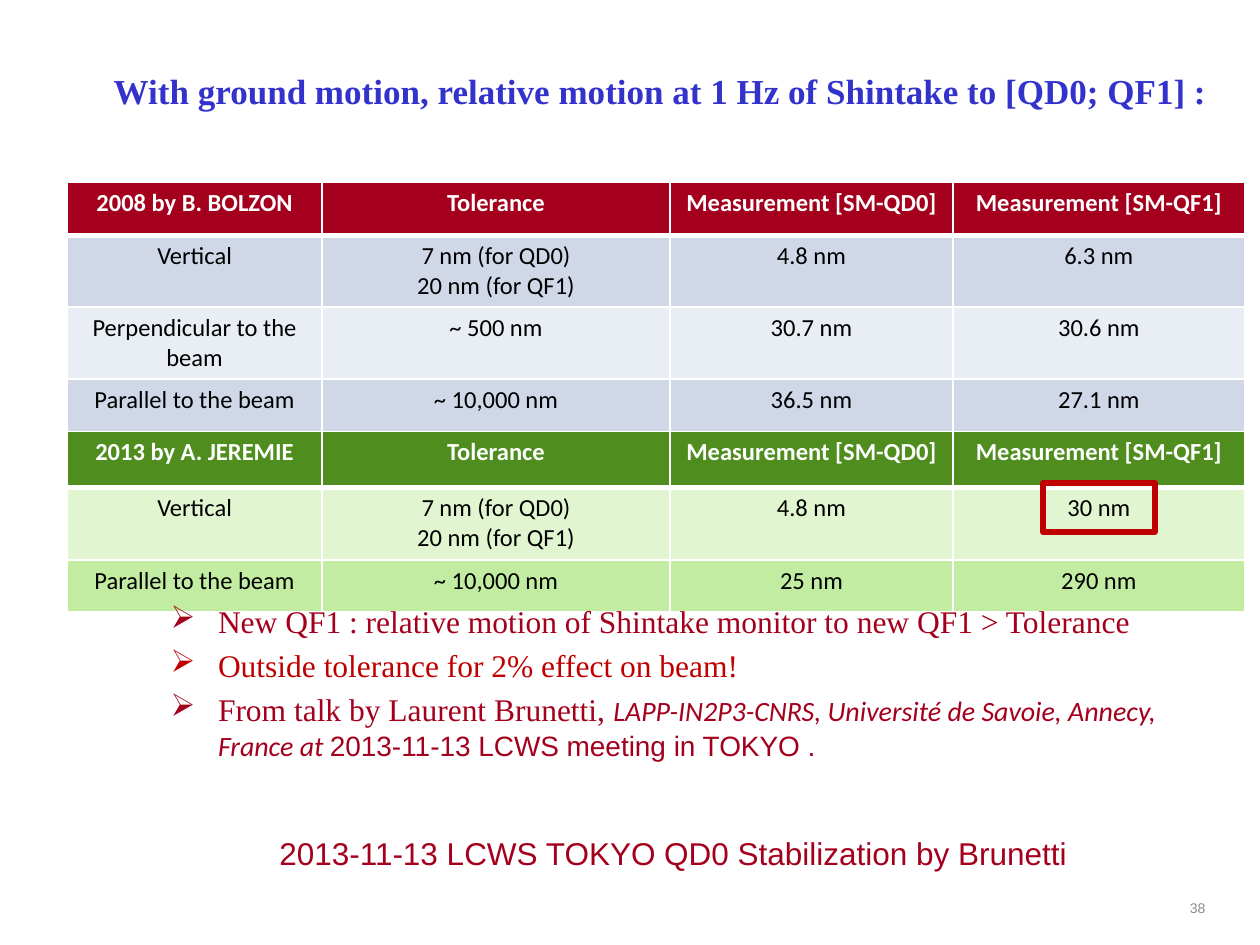
from lxml.etree import SubElement
from pptx import Presentation
from pptx.dml.color import RGBColor
from pptx.enum.shapes import MSO_SHAPE
from pptx.enum.text import MSO_ANCHOR, PP_ALIGN
from pptx.oxml.ns import qn
from pptx.util import Pt

COLORS = {
    "title": "3333CC", "crimson": "A4001D", "red": "C00000", "gray": "8C8C8C",
    "white": "FFFFFF", "black": "000000", "blue_dark": "D0D8E8",
    "blue_light": "E9EDF4", "green": "4F8E1E", "green_light": "E1F5D1",
    "green_dark": "C2ECA2",
}
SERIF, SANS, TABLE_FONT = "Times New Roman", "Arial", "Calibri"

# Content
TITLE = "With ground motion, relative motion at 1 Hz of Shintake to [QD0; QF1] :"
FOOTER = "2013-11-13 LCWS TOKYO QD0 Stabilization by Brunetti"
PAGE_NUMBER = "38"
HEADINGS = ["Tolerance", "Measurement [SM-QD0]", "Measurement [SM-QF1]"]
VERTICAL_TOLERANCE = "7 nm (for QD0)\n20 nm (for QF1)"
COLUMN_WIDTHS = [145.5, 199, 161.5, 167]
TABLES = [
    {"left": 38.5, "top": 104, "heights": [30.5, 41, 41, 30],
     "fills": ["crimson", "blue_dark", "blue_light", "blue_dark"],
     "rows": [["2008 by B. BOLZON", *HEADINGS],
              ["Vertical", VERTICAL_TOLERANCE, "4.8 nm", "6.3 nm"],
              ["Perpendicular to the beam", "~ 500 nm", "30.7 nm", "30.6 nm"],
              ["Parallel to the beam", "~ 10,000 nm", "36.5 nm", "27.1 nm"]]},
    {"left": 38.5, "top": 246.5, "heights": [32, 41.5, 29.5],
     "fills": ["green", "green_light", "green_dark"],
     "rows": [["2013 by A. JEREMIE", *HEADINGS],
              ["Vertical", VERTICAL_TOLERANCE, "4.8 nm", "30 nm"],
              ["Parallel to the beam", "~ 10,000 nm", "25 nm", "290 nm"]]},
]
# Each bullet is a list of runs: text, size, font, color, italic
BULLETS = [
    [("New QF1 : relative motion of Shintake monitor to new QF1 > Tolerance",
      18, SERIF, "crimson", False)],
    [("Outside tolerance for 2% effect on beam!", 18, SERIF, "red", False)],
    [("From talk by Laurent Brunetti, ", 18, SERIF, "crimson", False),
     ("LAPP-IN2P3-CNRS, Université de Savoie, Annecy, France at ",
      16, TABLE_FONT, "crimson", True),
     ("2013-11-13 LCWS meeting in TOKYO .", 16, SANS, "crimson", False)],
]


def rgb(name):
    return RGBColor.from_string(COLORS[name])


def style(font, size, name, color, bold=False, italic=False):
    font.size, font.name = Pt(size), name
    font.bold, font.italic = bold, italic
    font.color.rgb = rgb(color)


def add_text_box(slide, left, top, width, height):
    text_frame = slide.shapes.add_textbox(
        Pt(left), Pt(top), Pt(width), Pt(height)).text_frame
    text_frame.word_wrap = True
    return text_frame


def add_borders(cell, top, bottom):
    properties = cell._tc.get_or_add_tcPr()
    for tag, width in (("lnL", 1), ("lnR", 1), ("lnT", top), ("lnB", bottom)):
        line = SubElement(properties, qn(f"a:{tag}"), w=str(Pt(width)))
        fill = SubElement(line, qn("a:solidFill"))
        SubElement(fill, qn("a:srgbClr"), val=COLORS["white"])


def add_measurement_table(slide, data):
    heights = data["heights"]
    table = slide.shapes.add_table(
        len(heights), len(COLUMN_WIDTHS), Pt(data["left"]), Pt(data["top"]),
        Pt(sum(COLUMN_WIDTHS)), Pt(sum(heights))).table
    for column, width in zip(table.columns, COLUMN_WIDTHS):
        column.width = Pt(width)
    for index, (row, height) in enumerate(zip(table.rows, heights)):
        row.height = Pt(height)
        header = index == 0
        for cell, text in zip(row.cells, data["rows"][index]):
            add_borders(cell, 3 if index == 1 else 1, 3 if header else 1)
            cell.fill.solid()
            cell.fill.fore_color.rgb = rgb(data["fills"][index])
            cell.text_frame.text = text
            for paragraph in cell.text_frame.paragraphs:
                paragraph.alignment = PP_ALIGN.CENTER
                for run in paragraph.runs:
                    style(run.font, 14, TABLE_FONT,
                          "white" if header else "black", bold=header)


def add_bullets(text_frame):
    for index, runs in enumerate(BULLETS):
        paragraph = (text_frame.add_paragraph() if index
                     else text_frame.paragraphs[0])
        properties = paragraph._p.get_or_add_pPr()
        properties.set("marL", str(Pt(27)))
        properties.set("indent", str(Pt(-27)))
        SubElement(properties, qn("a:buChar"), char="➢")
        if index:
            paragraph.space_before = Pt(3.6)
        for text, size, font, color, italic in runs:
            run = paragraph.add_run()
            run.text = text
            style(run.font, size, font, color, italic=italic)


def main():
    presentation = Presentation()
    presentation.slide_width, presentation.slide_height = Pt(720), Pt(540)
    slide = presentation.slides.add_slide(presentation.slide_layouts[5])

    # Title
    title = slide.shapes.title
    title.left, title.top, title.width, title.height = (
        Pt(60), Pt(31.5), Pt(652), Pt(55.5))
    text_frame = title.text_frame
    text_frame.text = TITLE
    text_frame.word_wrap = True
    text_frame.vertical_anchor = MSO_ANCHOR.BOTTOM
    text_frame.margin_left, text_frame.margin_right = Pt(5), Pt(0)
    text_frame.margin_top, text_frame.margin_bottom = Pt(0), Pt(23)
    paragraph = text_frame.paragraphs[0]
    paragraph.alignment = PP_ALIGN.LEFT
    style(paragraph.runs[0].font, 20, SERIF, "title", bold=True)

    # Footer line and page number
    footer = add_text_box(slide, 152.5, 473, 491, 47)
    footer.text = FOOTER
    style(footer.paragraphs[0].runs[0].font, 18, SANS, "crimson")
    number = add_text_box(slide, 674.5, 497.5, 25.5, 42.5)
    number.text = PAGE_NUMBER
    number.vertical_anchor = MSO_ANCHOR.MIDDLE
    number.margin_left = number.margin_right = Pt(5.5)
    style(number.paragraphs[0].runs[0].font, 8, SANS, "gray")

    # Measurement tables
    for data in TABLES:
        add_measurement_table(slide, data)

    # Frame around the value out of tolerance
    frame = slide.shapes.add_shape(
        MSO_SHAPE.RECTANGLE, Pt(596), Pt(276), Pt(64), Pt(28))
    frame.shadow.inherit = False
    frame.fill.background()
    frame.line.color.rgb = rgb("red")
    frame.line.width = Pt(3)

    # Conclusions
    add_bullets(add_text_box(slide, 90.5, 340.5, 579, 127))

    presentation.save("out.pptx")


if __name__ == "__main__":
    main()
